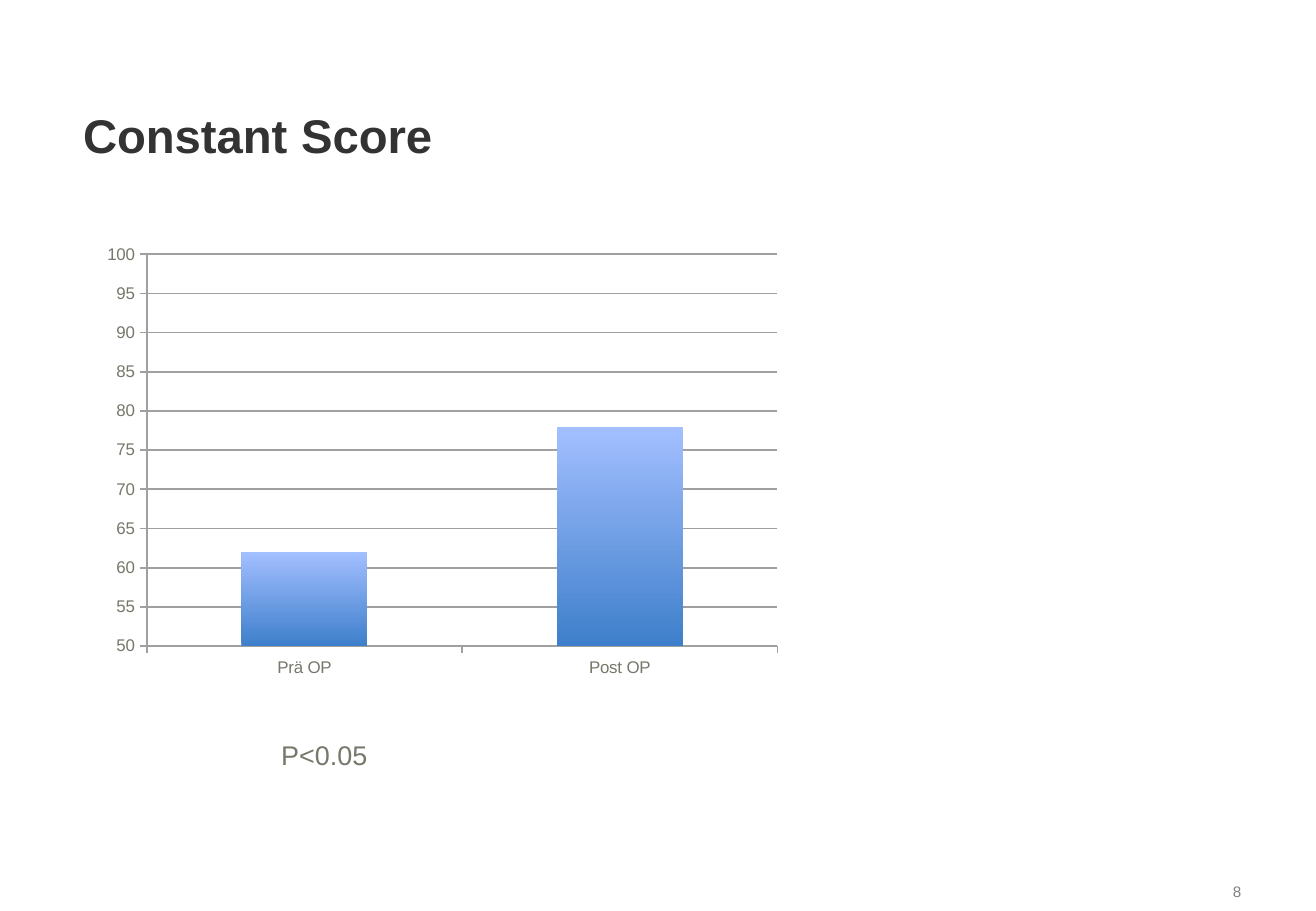
"""Build the Constant Score slide with its before and after column chart."""
from lxml.etree import SubElement
from pptx import Presentation
from pptx.chart.data import CategoryChartData
from pptx.dml.color import RGBColor
from pptx.enum.chart import XL_CHART_TYPE, XL_TICK_MARK
from pptx.enum.text import MSO_ANCHOR, MSO_AUTO_SIZE, PP_ALIGN
from pptx.oxml.ns import qn
from pptx.util import Inches, Pt

WIDTH, HEIGHT = Inches(10.83), Inches(7.5)
COLUMNS, ROWS = 130, 90
FONT = "Arial"
DARK = RGBColor(0x33, 0x33, 0x33)
GRAY = RGBColor(0x80, 0x80, 0x80)
OLIVE = RGBColor(0x75, 0x78, 0x6A)
RULE = RGBColor(0xA0, 0xA0, 0xA0)
BAR_TOP = RGBColor(0xA3, 0xBF, 0xFF)
BAR_BOTTOM = RGBColor(0x3E, 0x7F, 0xCB)


def grid(column, row, columns, rows):
    """Turn grid cells into left, top, width and height."""
    return (int(WIDTH * column / COLUMNS), int(HEIGHT * row / ROWS),
            int(WIDTH * columns / COLUMNS), int(HEIGHT * rows / ROWS))


def style(font, size, color, bold=False):
    """Set the face, size, colour and weight of a font."""
    font.name, font.size, font.bold = FONT, Pt(size), bold
    font.color.rgb = color


def add_title(slide, area, pieces):
    """Place the title and add its runs."""
    title = slide.shapes.title
    title.left, title.top, title.width, title.height = area
    frame = title.text_frame
    frame.vertical_anchor = MSO_ANCHOR.MIDDLE
    frame.auto_size = MSO_AUTO_SIZE.NONE
    paragraph = frame.paragraphs[0]
    paragraph.alignment = PP_ALIGN.LEFT
    for words, size, color in pieces:
        run = paragraph.add_run()
        run.text = words
        style(run.font, size, color, bold=True)


def add_label(slide, area, words, size, color, align=PP_ALIGN.LEFT, wrap=True):
    """Add a one-line text box."""
    frame = slide.shapes.add_textbox(*area).text_frame
    frame.word_wrap = wrap
    paragraph = frame.paragraphs[0]
    paragraph.alignment = align
    run = paragraph.add_run()
    run.text = words
    style(run.font, size, color)


def rule(line):
    """Give an axis or gridline its colour and width."""
    line.color.rgb = RULE
    line.width = Pt(1)


def set_plot_area(chart, **shares):
    """Fix the inner plot area as shares of the chart."""
    plot_area = chart.plots[0]._element.getparent()
    layout = plot_area.find(qn("c:layout"))
    if layout is None:
        layout = plot_area.makeelement(qn("c:layout"))
        plot_area.insert(0, layout)
    manual = SubElement(layout, qn("c:manualLayout"))
    settings = {"layoutTarget": "inner", "xMode": "edge", "yMode": "edge", **shares}
    for tag, value in settings.items():
        SubElement(manual, qn(f"c:{tag}")).set("val", str(value))


def add_score_chart(slide, area, scores):
    """Add the column chart with gradient bars."""
    data = CategoryChartData()
    data.categories = list(scores)
    data.add_series("Series 1", list(scores.values()))
    chart = slide.shapes.add_chart(XL_CHART_TYPE.COLUMN_CLUSTERED, *area, data).chart
    chart.has_legend = chart.has_title = False
    style(chart.font, 10, OLIVE)
    set_plot_area(chart, x=0.076, y=0.041, w=0.903, h=0.87)

    score_axis = chart.value_axis
    score_axis.minimum_scale, score_axis.maximum_scale = 50, 100
    score_axis.major_unit = 5
    score_axis.has_major_gridlines = True
    rule(score_axis.major_gridlines.format.line)
    for axis in (chart.category_axis, score_axis):
        axis.major_tick_mark = XL_TICK_MARK.OUTSIDE
        rule(axis.format.line)

    plot = chart.plots[0]
    plot.gap_width = 150
    plot.vary_by_categories = False
    bar_fill = plot.series[0].format.fill
    bar_fill.gradient()
    bar_fill.gradient_angle = 90
    for stop, color in zip(bar_fill.gradient_stops, (BAR_BOTTOM, BAR_TOP)):
        stop.color.rgb = color


def main():
    """Build and save the slide."""
    deck = Presentation()
    deck.slide_width, deck.slide_height = WIDTH, HEIGHT
    slide = deck.slides.add_slide(deck.slide_layouts[5])
    add_title(slide, grid(7, 9, 77, 8.5),
              [("Constant", 28, DARK), (" ", 29, GRAY), ("Score", 28, DARK)])
    add_label(slide, grid(101, 86.6, 22.8, 3.4), "8", 9, GRAY, align=PP_ALIGN.RIGHT)
    add_label(slide, grid(26.6, 72.4, 11, 4.4), "P<0.05", 16, OLIVE, wrap=False)
    add_score_chart(slide, grid(9.25, 23.3, 69, 44.5), {"Prä OP": 62, "Post OP": 78})
    deck.save("out.pptx")


if __name__ == "__main__":
    main()
